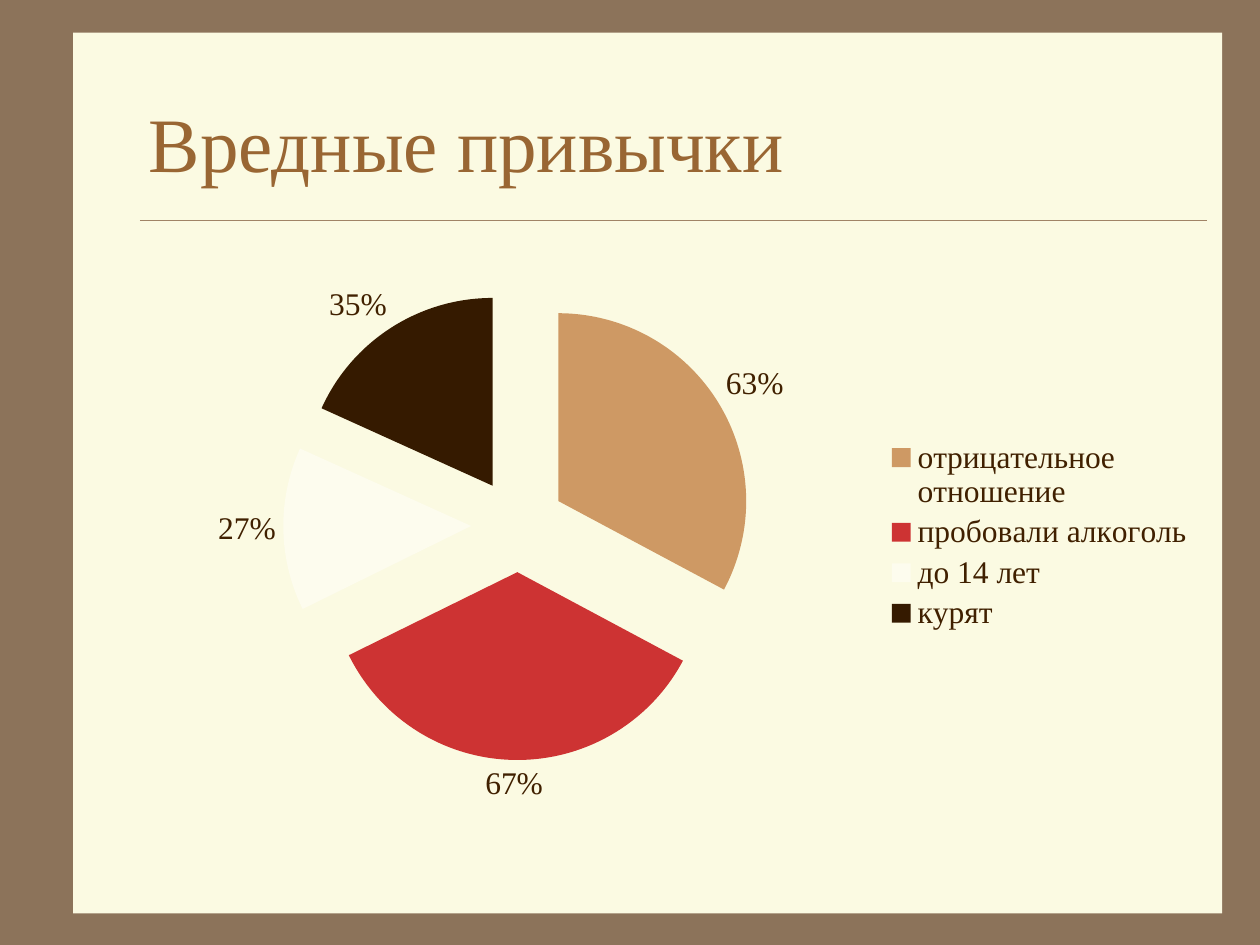
from dataclasses import dataclass
from lxml.etree import SubElement
from pptx import Presentation
from pptx.chart.data import CategoryChartData
from pptx.dml.color import RGBColor
from pptx.enum.chart import XL_CHART_TYPE, XL_LABEL_POSITION, XL_LEGEND_POSITION
from pptx.enum.shapes import MSO_CONNECTOR, MSO_SHAPE
from pptx.enum.text import MSO_ANCHOR
from pptx.oxml import parse_xml
from pptx.oxml.ns import nsdecls, qn
from pptx.util import Pt


@dataclass(frozen=True)
class Theme:
    font: str = "Times New Roman"
    frame: str = "8C735A"
    paper: str = "FBFAE2"
    rule: str = "A08366"
    title: str = "996633"
    text: str = "402000"
    title_size: int = 44
    chart_size: int = 18


@dataclass(frozen=True)
class Box:
    left: float
    top: float
    width: float
    height: float

    def emu(self) -> tuple:
        return Pt(self.left), Pt(self.top), Pt(self.width), Pt(self.height)


@dataclass(frozen=True)
class Slice:
    label: str
    value: float
    color: str


THEME = Theme()
PAPER = Box(41.8, 18.7, 656.6, 503.3)
TITLE = Box(78, 36, 612, 90)
CHART = Box(78, 144, 612, 324)
EXPLOSION = 25
SLICES = [
    Slice("отрицательное отношение", 0.63, "CE9964"),
    Slice("пробовали алкоголь", 0.67, "CD3333"),
    Slice("до 14 лет", 0.27, "FDFCEE"),
    Slice("курят", 0.35, "351A00"),
]


def rgb(color: str) -> RGBColor:
    return RGBColor.from_string(color)


def add_paper(s, box: Box, color: str) -> None:
    sp = s.shapes.add_shape(MSO_SHAPE.RECTANGLE, *box.emu())
    sp.shadow.inherit = False
    sp.fill.solid()
    sp.fill.fore_color.rgb = rgb(color)
    sp.line.fill.background()


def add_rule(s, left: float, right: float, y: float) -> None:
    cx = s.shapes.add_connector(MSO_CONNECTOR.STRAIGHT, Pt(left), Pt(y), Pt(right), Pt(y))
    cx.line.color.rgb = rgb(THEME.rule)
    cx.line.width = Pt(0.25)
    SubElement(cx._element.spPr, qn("a:effectLst"))


def add_text(s, text: str, *, box: Box, size: float, color: str) -> None:
    tf = s.shapes.add_textbox(*box.emu()).text_frame
    tf.word_wrap = True
    tf.vertical_anchor = MSO_ANCHOR.MIDDLE
    r = tf.paragraphs[0].add_run()
    r.text = text
    r.font.name = THEME.font
    r.font.size = Pt(size)
    r.font.color.rgb = rgb(color)


def add_pie(s, box: Box, slices: list[Slice]) -> None:
    data = CategoryChartData(number_format="0%")
    data.categories = [item.label for item in slices]
    data.add_series("Series 1", [item.value for item in slices])
    chart = s.shapes.add_chart(XL_CHART_TYPE.PIE, *box.emu(), data).chart
    chart.has_title = False
    chart.font.name = THEME.font
    chart.font.size = Pt(THEME.chart_size)
    chart.font.color.rgb = rgb(THEME.text)
    chart.has_legend = True
    chart.legend.position = XL_LEGEND_POSITION.RIGHT
    chart.legend.include_in_layout = False

    plot = chart.plots[0]
    plot.vary_by_categories = True
    series = plot.series[0]
    for i, item in enumerate(slices):
        fill = series.points[i].format.fill
        fill.solid()
        fill.fore_color.rgb = rgb(item.color)
    explosion = parse_xml(f'<c:explosion {nsdecls("c")} val="{EXPLOSION}"/>')
    series._element.find(qn("c:dPt")).addprevious(explosion)

    labels = series.data_labels
    labels.show_value = True
    labels.number_format = "0%"
    labels.number_format_is_linked = False
    labels.position = XL_LABEL_POSITION.OUTSIDE_END


def main() -> None:
    prs = Presentation()
    prs.slide_width, prs.slide_height = Pt(720), Pt(540)
    s = prs.slides.add_slide(prs.slide_layouts[6])
    s.background.fill.solid()
    s.background.fill.fore_color.rgb = rgb(THEME.frame)
    add_paper(s, PAPER, THEME.paper)
    add_rule(s, 80, 690, 126)
    add_text(s, "Вредные привычки", box=TITLE, size=THEME.title_size, color=THEME.title)
    add_pie(s, CHART, SLICES)
    prs.save("out.pptx")


if __name__ == "__main__":
    main()
